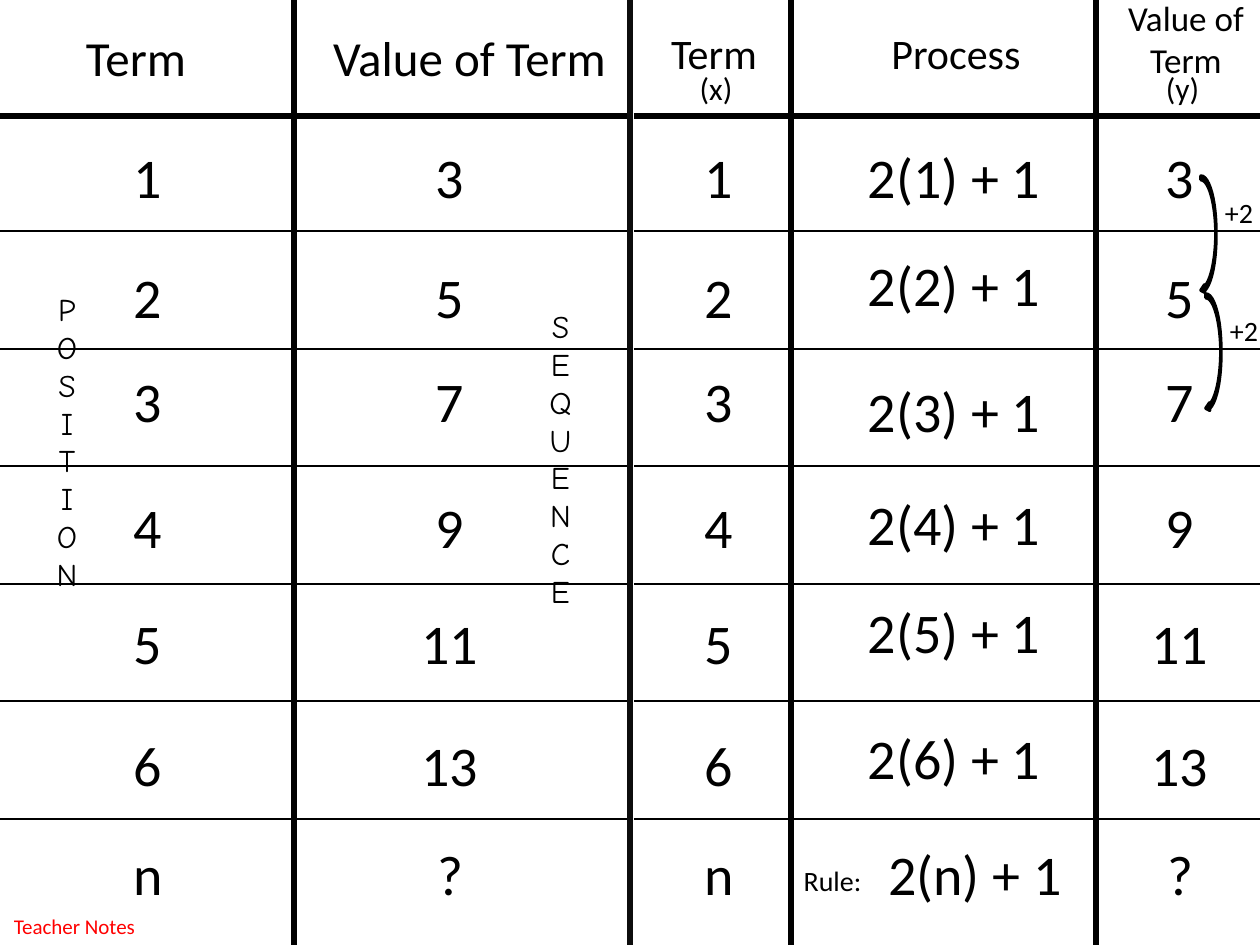
from dataclasses import dataclass

from lxml import etree
from pptx import Presentation
from pptx.dml.color import RGBColor
from pptx.enum.shapes import MSO_CONNECTOR, MSO_SHAPE
from pptx.enum.text import MSO_AUTO_SIZE, PP_ALIGN
from pptx.oxml.ns import qn
from pptx.util import Emu, Pt

STRAIGHT = MSO_CONNECTOR.STRAIGHT
CURVED_ARROW = MSO_SHAPE.CURVED_LEFT_ARROW
CENTER = PP_ALIGN.CENTER
GROW = MSO_AUTO_SIZE.SHAPE_TO_FIT_TEXT

PX_PER_INCH = 126
WIDTH, HEIGHT = 1260, 945


@dataclass(frozen=True)
class Theme:
    ink: RGBColor = RGBColor(0x00, 0x00, 0x00)
    divider: RGBColor = RGBColor(0x0D, 0x0D, 0x0D)
    note: RGBColor = RGBColor(0xFF, 0x00, 0x00)
    font: str = "Calibri"
    letter_font: str = "Comic Neue"
    value: int = 32
    wide_head: int = 28
    head: int = 24
    small_head: int = 20
    label: int = 18
    aside: int = 16
    footnote: int = 12
    thick: float = 3
    thin: float = 0.75
    arrow: float = 2


THEME = Theme()

# Column centres and contents, row by row
TERMS = ["1", "2", "3", "4", "5", "6", "n"]
VALUES = ["3", "5", "7", "9", "11", "13", "?"]
VALUE_COLUMNS = [(148, TERMS), (450, VALUES), (719, TERMS), (1180, VALUES)]
VALUE_TOPS = [136, 256, 360, 486, 602, 724, 833]
PROCESS_TOPS = [136, 244, 370, 483, 591, 717, 833]

# Text box of a heading or label: text, left, top, width, height, size
LABELS = [
    ("Term", 73, 21, 126, 72, THEME.wide_head),
    ("Value of Term", 319, 21, 301, 72, THEME.wide_head),
    ("Term", 658, 21, 112, 63, THEME.head),
    ("(x)", 687, 63, 58, 50, THEME.label),
    ("Process", 878, 21, 156, 63, THEME.head),
    ("Value of\nTerm", 1111, -10, 150, 97, THEME.small_head),
    ("(y)", 1153, 63, 59, 50, THEME.label),
    ("Rule:", 791, 857, 83, 47, THEME.aside),
]


def px(n):
    return Emu(round(n * 914400 / PX_PER_INCH))


def add_rule(s, x1, y1, x2, y2, weight, color=THEME.ink):
    line = s.shapes.add_connector(STRAIGHT, px(x1), px(y1), px(x2), px(y2))
    line.line.color.rgb = color
    line.line.width = Pt(weight)
    etree.SubElement(line._element.spPr, qn("a:effectLst"))


def add_text(s, text, left, top, width, height, size,
             color=THEME.ink, font=THEME.font):
    box = s.shapes.add_textbox(px(left), px(top), px(width), px(height))
    tf = box.text_frame
    tf.text = text
    tf.word_wrap = False
    tf.auto_size = GROW
    for p in tf.paragraphs:
        p.alignment = CENTER
        for r in p.runs:
            r.font.name = font
            r.font.size = Pt(size)
            r.font.color.rgb = color


def add_value(s, text, center, top, width):
    add_text(s, text, center - width / 2, top, width, 81, THEME.value)


def add_step(s, left, top):
    """Curved arrow between two rows, with its difference beside it."""
    sp = s.shapes.add_shape(CURVED_ARROW, px(left), px(top), px(15), px(118))
    sp.shadow.inherit = False
    sp.fill.solid()
    sp.fill.fore_color.rgb = THEME.ink
    sp.line.color.rgb = THEME.ink
    sp.line.width = Pt(THEME.arrow)
    add_text(s, "+2", left + 11, top + 13, 54, 47, THEME.aside)


def add_grid(s):
    for left, right in [(0, 630), (634, 1264)]:
        add_rule(s, left, 116, right, 116, THEME.thick)
        for i in range(6):
            y = round(231 + 117.6 * i)
            add_rule(s, left, y, right, y, THEME.thin)
    for x in (294, 791, 1096):
        add_rule(s, x, 0, x, HEIGHT, THEME.thick)
    add_rule(s, 630, 0, 630, HEIGHT, THEME.thick, THEME.divider)


def main():
    prs = Presentation()
    prs.slide_width, prs.slide_height = px(WIDTH), px(HEIGHT)
    s = prs.slides.add_slide(prs.slide_layouts[6])

    add_grid(s)

    # Headings and labels
    for label in LABELS:
        add_text(s, *label)

    # Terms and their values
    for center, column in VALUE_COLUMNS:
        for text, top in zip(column, VALUE_TOPS):
            add_value(s, text, center, top, 54 if len(text) == 1 else 83)

    # Process; the rule in the last row leaves room for its label
    for term, top in zip(TERMS, PROCESS_TOPS):
        center = 975 if term == "n" else 954
        add_value(s, f"2({term}) + 1", center, top, 200)

    # Words set letter by letter down the columns
    for word, left, top, width in [("POSITION", 42, 284, 50),
                                   ("SEQUENCE", 534, 301, 53)]:
        add_text(s, "\n".join(word), left, top, width, 318, THEME.label,
                 font=THEME.letter_font)

    # Differences between values
    for left, top in [(1201, 176), (1206, 294)]:
        add_step(s, left, top)

    add_text(s, "Teacher Notes", 0, 907, 149, 38, THEME.footnote, THEME.note)

    prs.save("out.pptx")


if __name__ == "__main__":
    main()
